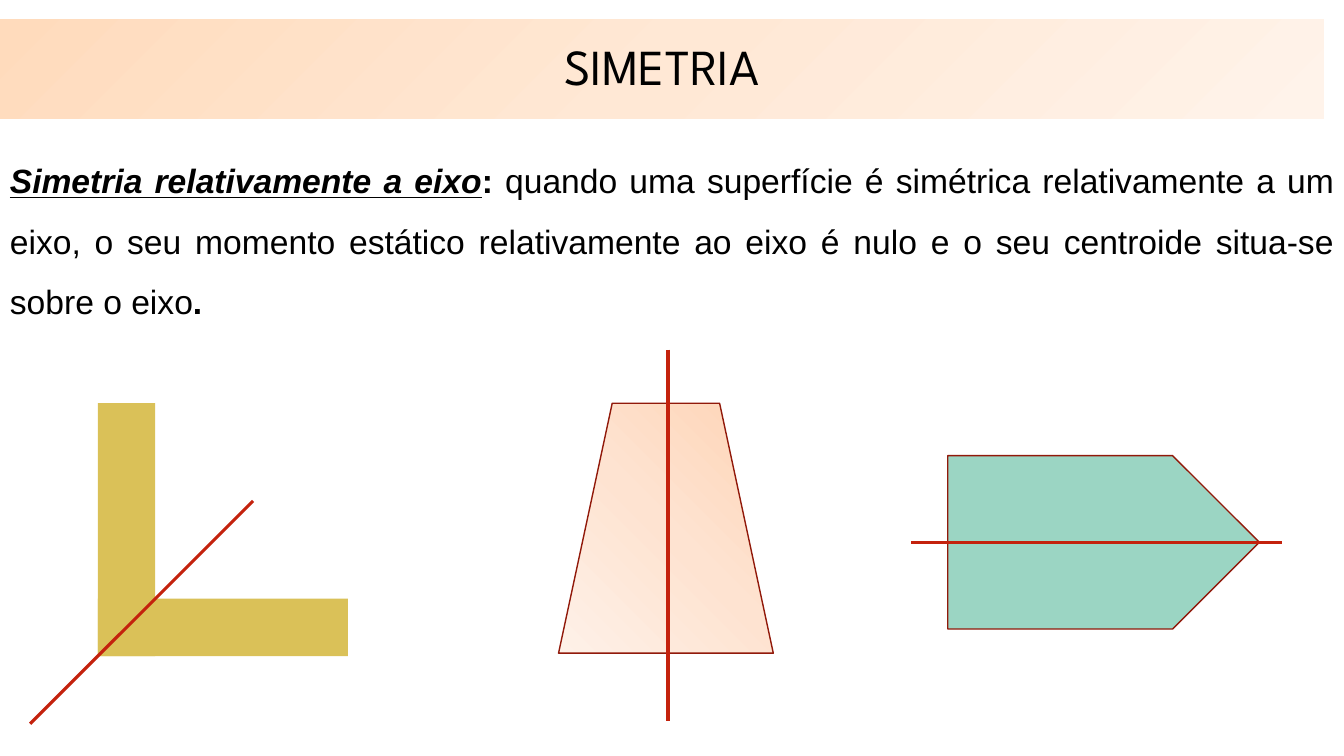
from lxml import etree
from pptx import Presentation
from pptx.dml.color import RGBColor
from pptx.enum import shapes, text
from pptx.oxml import ns
from pptx.util import Inches, Pt

COLORS = {
    "text": "000000",
    "axis": "C4220D",
    "outline": "91190A",
    "angle": "DAC158",
    "arrow": "9BD5C3",
}
BANNER_STOPS = ["FFDBBC", "FFE8D5", "FFF3EA"]
TRAPEZOID_STOPS = ["FED4B6", "FEE3D1", "FEF1E8"]
DEFINITION = [
    ("Simetria relativamente a eixo", True, True),
    (": ", True, False),
    ("quando uma superfície é simétrica relativamente a um eixo, o seu momento "
     "estático relativamente ao eixo é nulo e o seu centroide situa-se sobre o eixo",
     False, False),
    (".", True, False),
]


def color(name):
    return RGBColor.from_string(COLORS[name])


def fill_radially(shape, stops, focus):
    """Spread the stops evenly from the focus corner, given as l, t, r, b in percent."""
    shape.fill.background()
    no_fill = shape._element.spPr.find(ns.qn("a:noFill"))
    gradient = etree.Element(ns.qn("a:gradFill"), rotWithShape="1")
    stop_list = etree.SubElement(gradient, ns.qn("a:gsLst"))
    for index, value in enumerate(stops):
        position = index * 100000 // (len(stops) - 1)
        stop = etree.SubElement(stop_list, ns.qn("a:gs"), pos=str(position))
        etree.SubElement(stop, ns.qn("a:srgbClr"), val=value)
    circle = etree.SubElement(gradient, ns.qn("a:path"), path="circle")
    sides = {side: str(percent * 1000) for side, percent in zip("ltrb", focus)}
    etree.SubElement(circle, ns.qn("a:fillToRect"), **sides)
    no_fill.getparent().replace(no_fill, gradient)


def add_figure(parent, kind, box, fill=None, outline=None):
    shape = parent.shapes.add_shape(kind, *map(Inches, box))
    shape.shadow.inherit = False
    if fill:
        shape.fill.solid()
        shape.fill.fore_color.rgb = color(fill)
    if outline:
        shape.line.color.rgb = color(outline)
        shape.line.width = Pt(1)
    else:
        shape.line.fill.background()
    return shape


def add_axis(slide, *ends):
    line = slide.shapes.add_connector(shapes.MSO_CONNECTOR.STRAIGHT, *map(Inches, ends))
    line.line.color.rgb = color("axis")
    line.line.width = Pt(2.25)
    etree.SubElement(line._element.spPr, ns.qn("a:effectLst"))


def add_banner(slide, box):
    banner = add_figure(slide, shapes.MSO_SHAPE.RECTANGLE, box)
    fill_radially(banner, BANNER_STOPS, (0, 0, 100, 100))
    frame = banner.text_frame
    frame.text = "SIMETRIA"
    frame.vertical_anchor = text.MSO_ANCHOR.MIDDLE
    paragraph = frame.paragraphs[0]
    paragraph.alignment = text.PP_ALIGN.CENTER
    paragraph.line_spacing = 0.9
    font = paragraph.runs[0].font
    font.name, font.size = "League Spartan", Pt(36)
    font.color.rgb = color("text")


def add_definition(slide, box):
    frame = slide.shapes.add_textbox(*map(Inches, box)).text_frame
    frame.word_wrap = True
    frame.auto_size = text.MSO_AUTO_SIZE.SHAPE_TO_FIT_TEXT
    paragraph = frame.paragraphs[0]
    paragraph.alignment = text.PP_ALIGN.JUSTIFY
    paragraph.line_spacing = 1.5
    for words, bold, term in DEFINITION:
        run = paragraph.add_run()
        run.text = words
        font = run.font
        font.name, font.size = "Arial", Pt(24)
        font.bold, font.italic, font.underline = bold, term, term
        font.color.rgb = color("text")


def add_angle(slide, box):
    """L section with equal legs and its diagonal axis."""
    left, top, width, height = box
    thickness = 0.57
    bottom = top + height
    legs = slide.shapes.add_group_shape()
    for leg in ((left, top, thickness, height),
                (left, bottom - thickness, width, thickness)):
        add_figure(legs, shapes.MSO_SHAPE.RECTANGLE, leg, "angle")
    before, after = 0.67, 1.54
    add_axis(slide, left + after, bottom - after, left - before, bottom + before)


def add_trapezoid(slide, box):
    left, top, width, height = box
    trapezoid = add_figure(slide, shapes.MSO_SHAPE.TRAPEZOID, box, outline="outline")
    fill_radially(trapezoid, TRAPEZOID_STOPS, (100, 0, 0, 100))
    middle = left + width / 2 + 0.02
    add_axis(slide, middle, top - 0.53, middle, top + height + 0.67)


def add_arrow(slide, box):
    left, top, width, height = box
    add_figure(slide, shapes.MSO_SHAPE.PENTAGON, box, "arrow", "outline")
    middle = top + height / 2
    add_axis(slide, left - 0.36, middle, left + width + 0.23, middle)


def main():
    presentation = Presentation()
    presentation.slide_width = Inches(13.33)
    presentation.slide_height = Inches(7.5)
    slide = presentation.slides.add_slide(presentation.slide_layouts[6])
    add_banner(slide, (0, 0.19, 13.13, 0.99))
    add_definition(slide, (0, 1.34, 13.33, 1.92))
    add_angle(slide, (0.97, 4, 2.48, 2.51))
    add_trapezoid(slide, (5.54, 4, 2.13, 2.48))
    add_arrow(slide, (9.4, 4.52, 3.09, 1.72))
    presentation.save("out.pptx")


if __name__ == "__main__":
    main()
